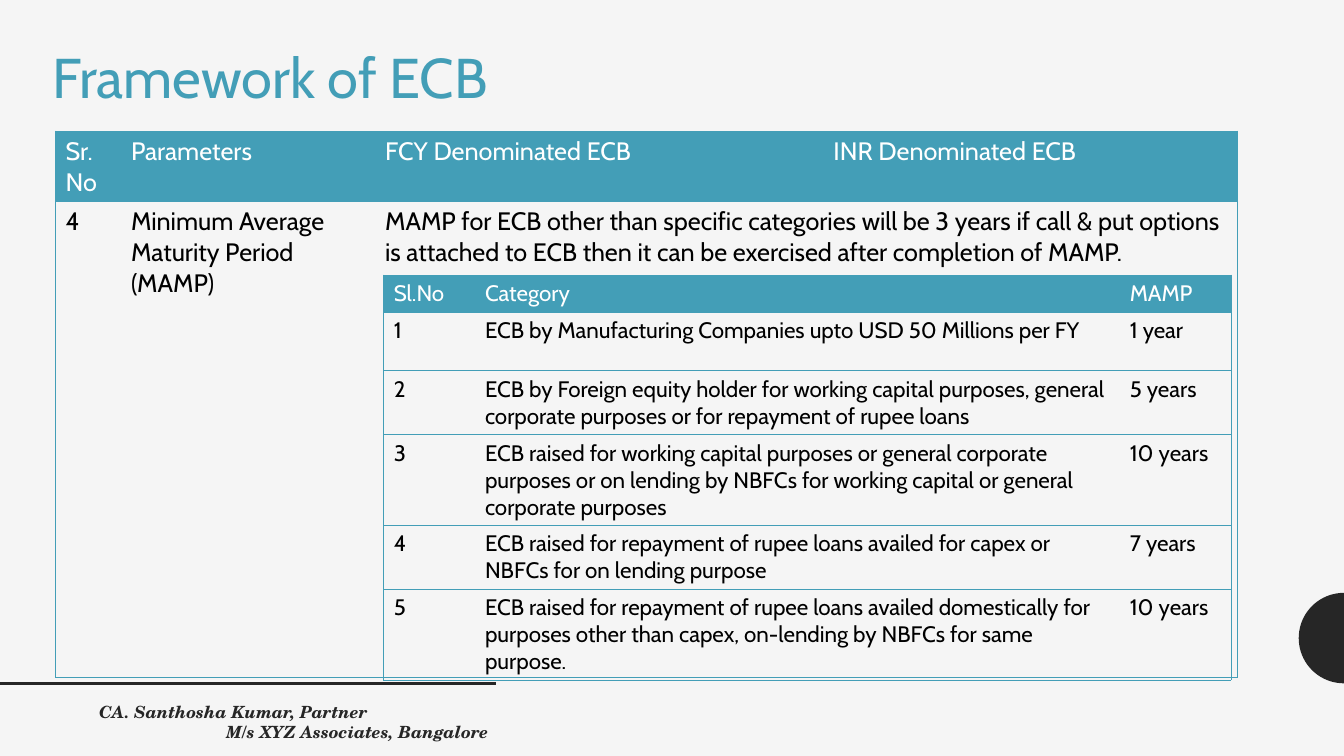
import math

from lxml import etree
from pptx import Presentation
from pptx.dml.color import RGBColor
from pptx.enum.shapes import MSO_CONNECTOR
from pptx.oxml.ns import qn
from pptx.util import Cm, Pt

TEAL = RGBColor(0x43, 0x9E, 0xB7)
DARK = RGBColor(0x26, 0x26, 0x26)
BLACK = RGBColor(0, 0, 0)
WHITE = RGBColor(0xFF, 0xFF, 0xFF)
PAPER = RGBColor(0xF5, 0xF5, 0xF5)
STRAIGHT = MSO_CONNECTOR.STRAIGHT
PLAIN_TABLE = "{2D5ABB26-0587-4C30-8999-92F81FD0307C}"
BODY_FONT = "Cabin"
FOOTER_FONT = "TeX Gyre Schola"

FRAMEWORK = [
    ["Sr. No", "Parameters", "FCY Denominated ECB", "INR Denominated ECB"],
    ["4", "Minimum Average Maturity Period (MAMP)",
     "MAMP for ECB other than specific categories will be 3 years if call & put options "
     "is attached to ECB then it can be exercised after completion of MAMP.", ""],
]
CATEGORIES = [
    ["Sl.No", "Category", "MAMP"],
    ["1", "ECB by Manufacturing Companies upto USD 50 Millions per FY", "1 year"],
    ["2", "ECB by Foreign equity holder for working capital purposes, general "
     "corporate purposes or for repayment of rupee loans", "5 years"],
    ["3", "ECB raised for working capital purposes or general corporate purposes or "
     "on lending by NBFCs for working capital or general corporate purposes", "10 years"],
    ["4", "ECB raised for repayment of rupee loans availed for capex or NBFCs for "
     "on lending purpose", "7 years"],
    ["5", "ECB raised for repayment of rupee loans availed domestically for purposes "
     "other than capex, on-lending by NBFCs for same purpose.", "10 years"],
]


class SlideBuilder:
    """Draws styled elements on one slide."""

    def __init__(self, slide):
        self.slide = slide
        slide.background.fill.solid()
        slide.background.fill.fore_color.rgb = PAPER

    def add_text(self, paragraph, text, size, color, font=BODY_FONT, strong=False):
        run = paragraph.add_run()
        run.text = text
        run.font.name = font
        run.font.size = Pt(size)
        run.font.color.rgb = color
        run.font.bold = run.font.italic = strong

    def text_box(self, left, top, width, height, lines, wrap=True, **style):
        box = self.slide.shapes.add_textbox(Cm(left), Cm(top), Cm(width), Cm(height))
        frame = box.text_frame
        frame.word_wrap = wrap
        for index, (text, indent) in enumerate(lines):
            paragraph = frame.add_paragraph() if index else frame.paragraphs[0]
            paragraph._p.get_or_add_pPr().set("marL", str(Cm(indent)))
            self.add_text(paragraph, text, **style)

    def rule(self, left, top, right):
        line = self.slide.shapes.add_connector(STRAIGHT, Cm(left), Cm(top), Cm(right), Cm(top))
        line.line.color.rgb = DARK
        line.line.width = Pt(2)
        etree.SubElement(line._element.spPr, qn("a:effectLst"))

    def half_disc(self, right, middle, radius, steps=40):
        angles = [math.pi * (0.5 + step / steps) for step in range(steps + 1)]
        points = [(Cm(right + radius * math.cos(angle)), Cm(middle + radius * math.sin(angle)))
                  for angle in angles]
        outline = self.slide.shapes.build_freeform(*points[0])
        outline.add_line_segments(points[1:])
        shape = outline.convert_to_shape()
        shape.shadow.inherit = False
        shape.fill.solid()
        shape.fill.fore_color.rgb = DARK
        shape.line.fill.background()

    def borders(self, cell, sides):
        properties = cell._tc.get_or_add_tcPr()
        for index, side in enumerate(sides):
            line = etree.Element(qn(f"a:ln{side}"), w=str(Pt(0.5)))
            fill = etree.SubElement(line, qn("a:solidFill"))
            etree.SubElement(fill, qn("a:srgbClr"), val=str(TEAL))
            properties.insert(index, line)

    def table(self, left, top, widths, heights, rows, size, merge=None):
        frame = self.slide.shapes.add_table(
            len(rows), len(widths), Cm(left), Cm(top), Cm(sum(widths)), Cm(sum(heights)))
        table = frame.table
        table._tbl.tblPr.find(qn("a:tableStyleId")).text = PLAIN_TABLE
        for column, width in zip(table.columns, widths):
            column.width = Cm(width)
        for row, height in zip(table.rows, heights):
            row.height = Cm(height)
        if merge:
            first, last = merge
            table.cell(*first).merge(table.cell(*last))
        for row, texts in enumerate(rows):
            for column, text in enumerate(texts):
                cell = table.cell(row, column)
                if row:
                    cell.fill.background()
                else:
                    cell.fill.solid()
                    cell.fill.fore_color.rgb = TEAL
                if text:
                    paragraph = cell.text_frame.paragraphs[0]
                    self.add_text(paragraph, text, size, BLACK if row else WHITE)
                at_left = column == 0
                at_right = column + cell.span_width >= len(widths) if cell.is_merge_origin \
                    else column == len(widths) - 1
                self.borders(cell, "L" * at_left + "R" * at_right + "TB")


def main():
    presentation = Presentation()
    presentation.slide_width = Cm(33.87)
    presentation.slide_height = Cm(19.05)
    builder = SlideBuilder(presentation.slides.add_slide(presentation.slide_layouts[6]))
    builder.half_disc(33.87, 16.08, 1.14)
    builder.rule(0, 17.22, 12.5)
    builder.text_box(1.07, 0.94, 11.5, 1.96, [("Framework of ECB", 0)],
                     wrap=False, size=40, color=TEAL)
    builder.table(1.4, 3.3, [1.65, 6.4, 11.3, 10.44], [1.68, 12], FRAMEWORK, 18,
                  merge=((1, 2), (1, 3)))
    builder.table(9.67, 6.93, [2.3, 16.25, 2.8], [0.9, 1.48, 1.55, 2.2, 1.55, 2.13],
                  CATEGORIES, 16)
    builder.text_box(2.1, 17.55, 10.6, 1.02,
                     [("CA. Santhosha Kumar, Partner", 0.15),
                      ("M/s XYZ Associates, Bangalore", 3.35)],
                     size=12, color=DARK, font=FOOTER_FONT, strong=True)
    presentation.save("out.pptx")


if __name__ == "__main__":
    main()
